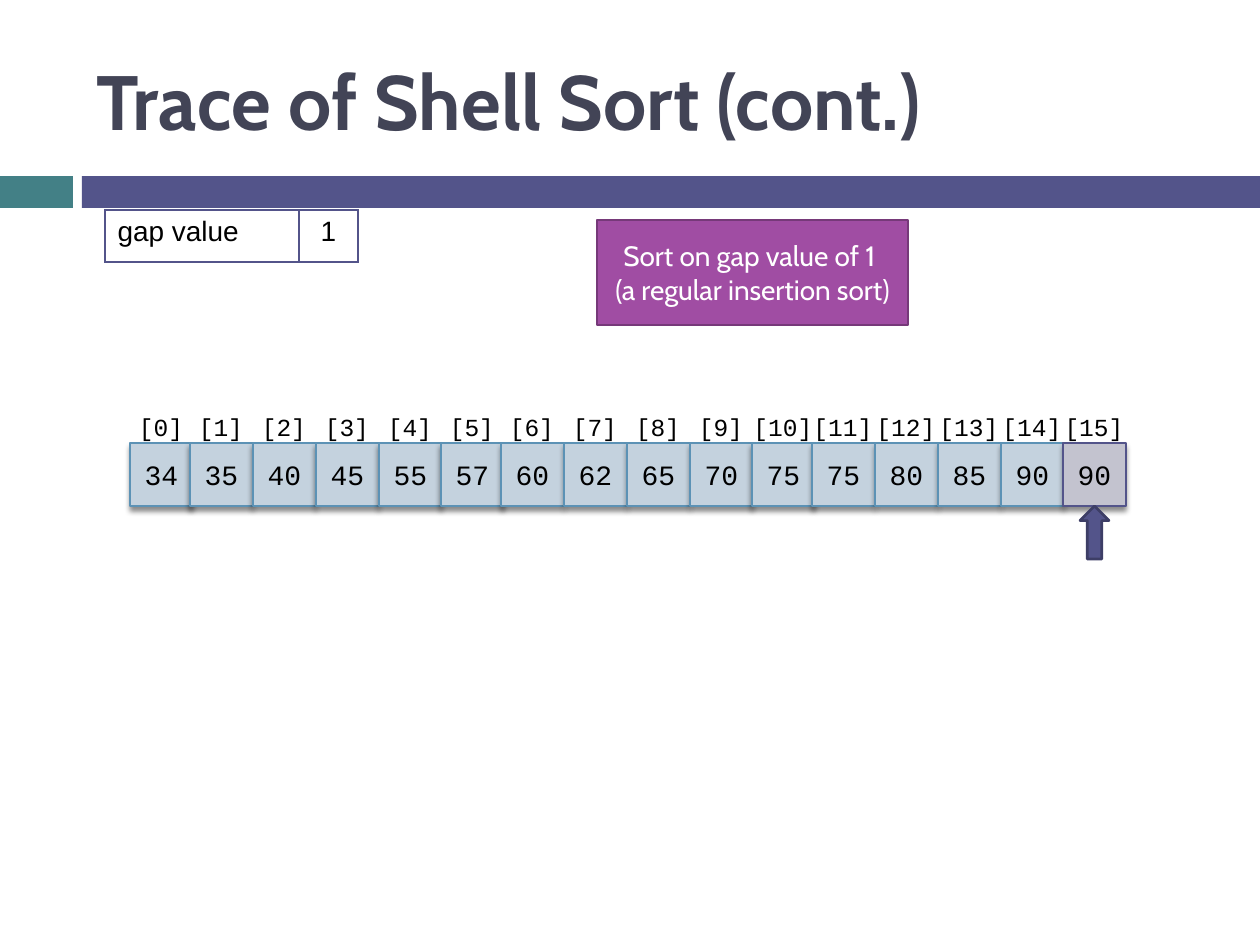
"""Build a slide tracing the last pass of Shell sort."""
from lxml.etree import SubElement
from pptx import Presentation
from pptx.dml.color import RGBColor
from pptx.enum.shapes import MSO_SHAPE as SHAPE
from pptx.enum.text import MSO_ANCHOR as ANCHOR, MSO_AUTO_SIZE as FIT, PP_ALIGN as ALIGN
from pptx.oxml.ns import qn
from pptx.util import Emu, Pt

BLACK = RGBColor(0x00, 0x00, 0x00)
WHITE = RGBColor(0xFF, 0xFF, 0xFF)
SLATE = RGBColor(0x42, 0x44, 0x56)
TEAL = RGBColor(0x43, 0x80, 0x86)
INDIGO = RGBColor(0x53, 0x54, 0x8A)
DARK_INDIGO = RGBColor(0x3D, 0x3E, 0x66)
PURPLE = RGBColor(0xA0, 0x4D, 0xA3)
DARK_PURPLE = RGBColor(0x76, 0x39, 0x79)
PALE_BLUE = RGBColor(0xC4, 0xD2, 0xDE)
BLUE = RGBColor(0x5C, 0x92, 0xB5)
PALE_INDIGO = RGBColor(0xC3, 0xC3, 0xCF)

VALUES = [34, 35, 40, 45, 55, 57, 60, 62, 65, 70, 75, 75, 80, 85, 90, 90]
OFFSETS = [0, 60, 123, 186, 249]
ARRAY_LEFT, CELL_TOP, CELL, BLOCK = 130, 443, 63, 311
LABEL_TOP, LABEL_H = 406, 43


def px(*lengths):
    """Turn pixel lengths into EMU."""
    return [Emu(n * 914400 // 126) for n in lengths]


class Deck:
    """Hold the text styles and the current slide."""

    STYLES = {
        "title": {"name": "Cabin", "size": Pt(44), "bold": True},
        "callout": {"name": "Cabin", "size": Pt(16)},
        "table": {"name": "Arial", "size": Pt(16)},
        "value": {"name": "Courier New", "size": Pt(16)},
        "index": {"name": "Courier New", "size": Pt(14)},
    }

    def __init__(self, prs):
        """Add a title-only slide."""
        self.s = prs.slides.add_slide(prs.slide_layouts[5])

    def text(self, tf, text, style, color=BLACK, align=ALIGN.CENTER):
        """Fill a text frame with one styled paragraph."""
        p = tf.paragraphs[0]
        p.text = text
        p.alignment = align
        for r in p.runs:
            for key, value in self.STYLES[style].items():
                setattr(r.font, key, value)
            r.font.color.rgb = color

    def title(self, text, *box):
        """Place and fill the title placeholder."""
        sp = self.s.shapes.title
        sp.left, sp.top, sp.width, sp.height = px(*box)
        sp.text_frame.vertical_anchor = ANCHOR.MIDDLE
        self.text(sp.text_frame, text, "title", SLATE, ALIGN.LEFT)

    def shape(self, kind, box, fill, line=None, width=1.5, parent=None):
        """Add a flat preset shape."""
        sp = (parent or self.s).shapes.add_shape(kind, *px(*box))
        sp.shadow.inherit = False
        sp.fill.solid()
        sp.fill.fore_color.rgb = fill
        if line is None:
            sp.line.fill.background()
        else:
            sp.line.color.rgb = line
            sp.line.width = Pt(width)
        return sp

    def callout(self, text, *box):
        """Add the box that explains the step."""
        sp = self.shape(SHAPE.RECTANGLE, box, PURPLE, DARK_PURPLE)
        self.text(sp.text_frame, text, "callout", WHITE)

    def cell(self, group, value, left, fill, line):
        """Add one array cell with a soft shadow."""
        box = left, CELL_TOP, CELL, CELL
        sp = self.shape(SHAPE.RECTANGLE, box, fill, line, 0.79, group)
        self.text(sp.text_frame, str(value), "value")
        effects = sp._element.spPr.find(qn("a:effectLst"))
        shadow = SubElement(effects, qn("a:outerShdw"), blurRad="38100", dist="30480",
                            dir="5400000", algn="t", rotWithShape="0")
        color = SubElement(shadow, qn("a:srgbClr"), val=str(BLACK))
        SubElement(color, qn("a:alpha"), val="45000")

    def index(self, group, i, left):
        """Add an index label centred over its cell."""
        width = 76 if i < 10 else 100
        box = left + (CELL - width) // 2, LABEL_TOP, width, LABEL_H
        tf = group.shapes.add_textbox(*px(*box)).text_frame
        tf.word_wrap = True
        tf.auto_size = FIT.SHAPE_TO_FIT_TEXT
        self.text(tf, f"[{i}]", "index")

    def array(self, values):
        """Add the cells and labels in groups of equal size."""
        size, last = len(OFFSETS), len(values) - 1
        for start in range(0, len(values), size):
            group = self.s.shapes.add_group_shape()
            left = ARRAY_LEFT + BLOCK * (start // size)
            items = [(start + n, value, left + OFFSETS[n])
                     for n, value in enumerate(values[start:start + size])]
            for i, value, x in items:
                colors = (PALE_INDIGO, INDIGO) if i == last else (PALE_BLUE, BLUE)
                self.cell(group, value, x, *colors)
            for i, _, x in items:
                self.index(group, i, x)

    def table(self, cells, left, top, widths, height):
        """Add a one-row table with thin borders."""
        box = px(left, top, sum(widths), height)
        table = self.s.shapes.add_table(1, len(widths), *box).table
        table.first_row = table.horz_banding = False
        for n, (text, align) in enumerate(cells):
            table.columns[n].width = px(widths[n])[0]
            cell = table.cell(0, n)
            self.text(cell.text_frame, text, "table", align=align)
            for side in ("lnL", "lnR", "lnT", "lnB"):
                ln = SubElement(cell._tc.get_or_add_tcPr(), qn(f"a:{side}"), w=str(Pt(1)))
                SubElement(SubElement(ln, qn("a:solidFill")), qn("a:srgbClr"), val=str(INDIGO))
            cell.fill.background()


def main():
    """Lay out the slide and save it."""
    prs = Presentation()
    prs.slide_width, prs.slide_height = px(1260, 945)
    deck = Deck(prs)
    deck.shape(SHAPE.RECTANGLE, (0, 176, 73, 32), TEAL)
    deck.shape(SHAPE.RECTANGLE, (82, 176, 1178, 32), INDIGO)
    deck.title("Trace of Shell Sort (cont.)", 84, 32, 1124, 136)
    deck.array(VALUES)
    gap = [("gap value", ALIGN.LEFT), ("1", ALIGN.CENTER)]
    deck.table(gap, 105, 210, (194, 59), 52)
    deck.callout("Sort on gap value of 1 \v(a regular insertion sort)", 597, 220, 311, 105)
    arrow = deck.shape(SHAPE.DOWN_ARROW, (1080, 506, 29, 53), INDIGO, DARK_INDIGO)
    arrow.rotation = 180
    prs.save("out.pptx")


if __name__ == "__main__":
    main()
